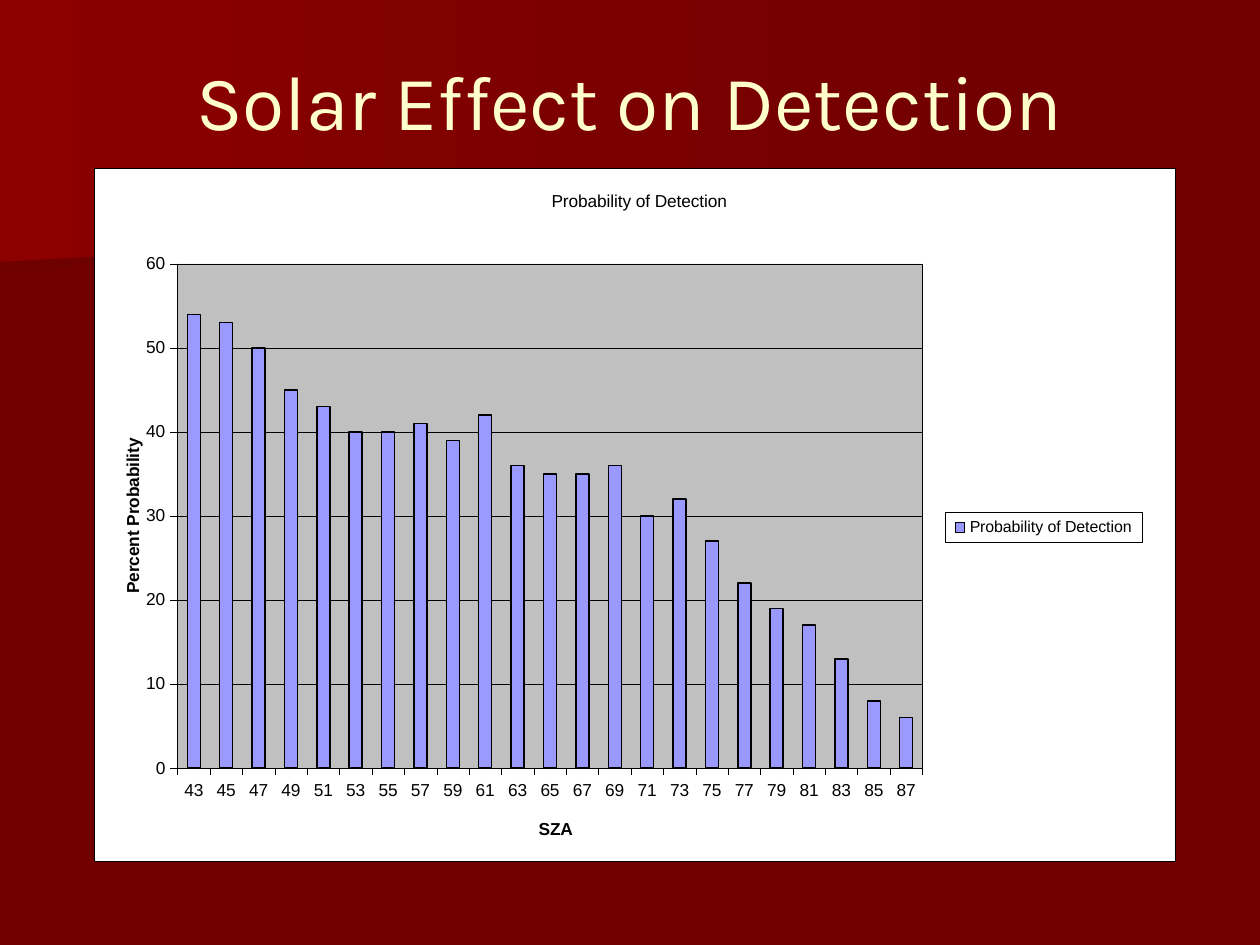
from lxml import etree
from pptx import Presentation
from pptx import util as u
from pptx.chart.data import CategoryChartData
from pptx.dml.color import RGBColor
from pptx.enum import chart as ch, text
from pptx.oxml import parse_xml
from pptx.oxml.ns import nsdecls, qn

BACK = RGBColor(0x72, 0x00, 0x00)
SHADE = RGBColor(0x6F, 0x00, 0x00)
GLOW = RGBColor(0x8C, 0x00, 0x00)
CREAM = RGBColor(0xFF, 0xFF, 0xCC)
BLACK = RGBColor(0x00, 0x00, 0x00)
WHITE = RGBColor(0xFF, 0xFF, 0xFF)
GREY = RGBColor(0xC0, 0xC0, 0xC0)
LILAC = RGBColor(0x99, 0x99, 0xFF)

HEADING = "Solar Effect on Detection"
SERIES = "Probability of Detection"
ANGLES = range(43, 88, 2)
DETECTION = [54, 53, 50, 45, 43, 40, 40, 41, 39, 42, 36, 35,
             35, 36, 30, 32, 27, 22, 19, 17, 13, 8, 6]
# Outline in cm, colour at the left edge; both fade into the background
BANDS = [
    ([(19.76, 3.89), (0, 5.51), (0, 2.57), (19.79, 2.57), (19.76, 3.25)], SHADE),
    ([(20.12, 4.11), (0, 5.28), (0, 0), (20.12, 0)], GLOW),
]
HAIR = 0.21


def add_band(slide, points, color):
    pts = [(u.Cm(x), u.Cm(y)) for x, y in points]
    builder = slide.shapes.build_freeform(*pts[0])
    builder.add_line_segments(pts[1:], close=True)
    sp = builder.convert_to_shape()
    sp.shadow.inherit = False
    sp.line.fill.background()
    sp.fill.gradient()
    sp.fill.gradient_angle = 0
    for stop, rgb in zip(sp.fill.gradient_stops, (color, BACK)):
        stop.color.rgb = rgb


def style(font, size=9.9, color=BLACK, name="Arial", bold=False):
    font.size, font.name, font.bold = u.Pt(size), name, bold
    font.color.rgb = color


def write(tf, words, align=text.PP_ALIGN.CENTER, **fmt):
    p = tf.paragraphs[0]
    p.alignment = align
    r = p.add_run()
    r.text = words
    style(r.font, **fmt)


def outline(line, width=HAIR):
    line.color.rgb = BLACK
    line.width = u.Pt(width)


def place(element, after=None, target=None, **box):
    """Give a chart part a manual layout, as fractions of the chart."""
    for old in element.findall(qn("c:layout")):
        element.remove(old)
    layout = etree.Element(qn("c:layout"))
    manual = etree.SubElement(layout, qn("c:manualLayout"))
    settings = {"layoutTarget": target} if target else {}
    settings.update(xMode="edge", yMode="edge", **box)
    for tag, val in settings.items():
        etree.SubElement(manual, qn("c:" + tag)).set("val", str(val))
    if after:
        element.find(qn(after)).addnext(layout)
    else:
        element.insert(0, layout)


def box_xml(fill):
    return parse_xml(
        f'<c:spPr {nsdecls("c", "a")}><a:solidFill><a:srgbClr val="{fill}"/></a:solidFill>'
        f'<a:ln w="{u.Pt(HAIR)}"><a:solidFill><a:srgbClr val="{BLACK}"/></a:solidFill></a:ln>'
        '</c:spPr>')


def add_title(owner, words, x, y, **fmt):
    """Title a chart or an axis at the given fraction of the chart."""
    title = getattr(owner, "chart_title", None) or owner.axis_title
    write(title.text_frame, words, **fmt)
    place(title._element, after="c:tx", x=x, y=y)


def add_detection_chart(slide):
    data = CategoryChartData()
    data.categories = [str(a) for a in ANGLES]
    data.add_series(SERIES, DETECTION)
    chart = slide.shapes.add_chart(
        ch.XL_CHART_TYPE.COLUMN_CLUSTERED,
        u.Cm(1.9), u.Cm(3.39), u.Cm(21.8), u.Cm(13.97), data).chart
    style(chart.font)
    add_title(chart, SERIES, 0.42, 0.026)

    plot = chart.plots[0]
    plot.gap_width = 150
    plot.vary_by_categories = False
    bars = plot.series[0].format
    bars.fill.solid()
    bars.fill.fore_color.rgb = LILAC
    outline(bars.line, 0.86)

    axes = [(chart.category_axis, "SZA", 0.408, 0.933),
            (chart.value_axis, "Percent Probability", 0.022, 0.385)]
    for axis, words, x, y in axes:
        add_title(axis, words, x, y, bold=True)
        axis.major_tick_mark = ch.XL_TICK_MARK.OUTSIDE
        style(axis.tick_labels.font)
        outline(axis.format.line)
    scale = chart.value_axis
    scale.minimum_scale, scale.maximum_scale, scale.major_unit = 0, 60, 10
    outline(scale.major_gridlines.format.line)

    chart.has_legend = True
    legend = chart.legend
    legend.position = ch.XL_LEGEND_POSITION.RIGHT
    legend.include_in_layout = False
    style(legend.font, size=9.1)
    place(legend._element, after="c:legendPos", x=0.787, y=0.497, w=0.182, h=0.043)
    legend._element.find(qn("c:txPr")).addprevious(box_xml(WHITE))

    space = chart._chartSpace
    area = space.chart.plotArea
    place(area, target="inner", x=0.077, y=0.138, w=0.689, h=0.728)
    area.append(box_xml(GREY))
    space.chart.addnext(box_xml(WHITE))


def main():
    prs = Presentation()
    prs.slide_width, prs.slide_height = u.Cm(25.4), u.Cm(19.05)
    s = prs.slides.add_slide(prs.slide_layouts[6])
    s.background.fill.solid()
    s.background.fill.fore_color.rgb = BACK
    for points, color in BANDS:
        add_band(s, points, color)

    tf = s.shapes.add_textbox(u.Cm(1.27), u.Cm(0.43), u.Cm(22.86), u.Cm(3.18)).text_frame
    tf.word_wrap = True
    tf.vertical_anchor = text.MSO_ANCHOR.MIDDLE
    write(tf, HEADING, size=44, color=CREAM, name="Karla")

    add_detection_chart(s)
    prs.save("out.pptx")


if __name__ == "__main__":
    main()
